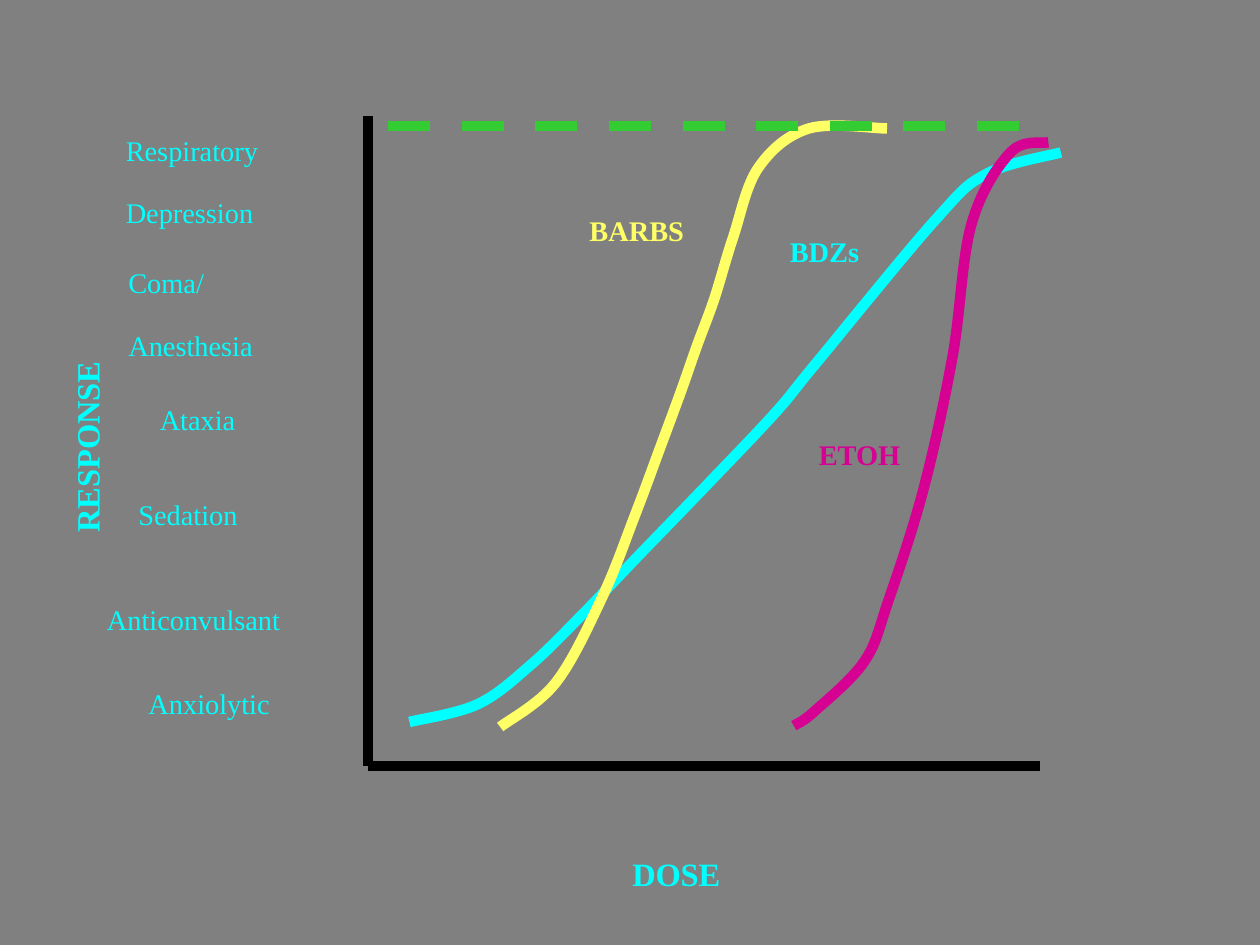
"""Build a slide of dose-response curves for three sedative drug classes."""
from lxml.etree import SubElement
from pptx import Presentation
from pptx.dml.color import RGBColor
from pptx.enum.dml import MSO_LINE
from pptx.enum.shapes import MSO_CONNECTOR
from pptx.enum.text import MSO_AUTO_SIZE
from pptx.oxml.ns import qn
from pptx.util import Inches, Pt

GRAY = RGBColor(0x80, 0x80, 0x80)
BLACK = RGBColor(0, 0, 0)
CYAN = RGBColor(0, 0xFF, 0xFF)
YELLOW = RGBColor(0xFF, 0xFF, 0x66)
GREEN = RGBColor(0x33, 0xCC, 0x33)
PINK = RGBColor(0xD6, 0x00, 0x93)

FONT = "Times New Roman"
STROKE = Pt(6)
LABEL, TITLE = 28, 32
HEIGHT = {LABEL: 0.42, TITLE: 0.45}
LEADING = 0.31

LEFT, RIGHT = 2.92, 8.25
TOP, BASE = 0.92, 6.08
AXES = [((LEFT, TOP), (LEFT, BASE)), ((LEFT, BASE), (RIGHT, BASE))]
CEILING = ((3.08, 1), (RIGHT, 1))

BDZS = [
    (3.25, 5.73), (3.79, 5.59), (4.21, 5.28), (4.62, 4.88), (5.04, 4.44),
    (5.6, 3.86), (6.15, 3.28), (6.48, 2.88), (7.42, 1.75), (7.83, 1.38),
    (8.42, 1.21),
]
BARBS = [
    (3.97, 5.77), (4.41, 5.42), (4.78, 4.74), (5.04, 4.09), (5.23, 3.58),
    (5.4, 3.12), (5.53, 2.75), (5.67, 2.37), (5.82, 1.88), (6.02, 1.33),
    (6.42, 1.02), (7.04, 1.02),
]
ETOH = [
    (6.3, 5.76), (6.46, 5.65), (6.86, 5.25), (7.05, 4.77), (7.33, 3.88),
    (7.56, 2.83), (7.71, 1.78), (8.02, 1.21), (8.32, 1.13),
]

EFFECTS = [
    (["Respiratory", "Depression"], 0.9, 0.78, 1.56),
    (["Coma/", "Anesthesia"], 0.92, 1.83, 1.51),
    (["Ataxia"], 1.17, 2.92, 0.94),
    (["Sedation"], 1, 3.67, 1.25),
    (["Anxiolytic"], 1.08, 5.17, 1.32),
    (["Anticonvulsant"], 0.75, 4.5, 1.92),
]
TITLES = [
    (["DOSE"], 4.92, 6.47, 1.03, 0),
    (["RESPONSE"], -0.46, 3.19, 1.82, 270),
]
DRUGS = [
    (["BARBS"], 4.58, 1.42, 1.14, YELLOW),
    (["BDZs"], 6.17, 1.58, 0.89, CYAN),
    (["ETOH"], 6.4, 3.19, 0.93, PINK),
]


def stroke(line, color):
    line.color.rgb = color
    line.width = STROKE


def add_line(shapes, ends, color):
    (x1, y1), (x2, y2) = ends
    line = shapes.add_connector(
        MSO_CONNECTOR.STRAIGHT, Inches(x1), Inches(y1), Inches(x2), Inches(y2))
    stroke(line.line, color)
    SubElement(line._element.spPr, qn("a:effectLst"))
    return line


def shift(point, start, end):
    """Move a point by a sixth of the step from start to end."""
    return tuple(p + (b - a) / 6 for p, a, b in zip(point, start, end))


def smooth(knots):
    """Give two handles and an end for each Catmull-Rom span."""
    padded = [knots[0], *knots, knots[-1]]
    spans = zip(padded, padded[1:], padded[2:], padded[3:])
    return [(shift(start, prev, end), shift(end, after, start), end)
            for prev, start, end, after in spans]


def to_emu(point):
    return tuple(Inches(value) for value in point)


def add_curve(shapes, knots, color):
    spans = smooth(knots)
    pen = shapes.build_freeform(*to_emu(knots[0]))
    pen.add_line_segments(
        [to_emu(point) for span in spans for point in span], close=False)
    curve = pen.convert_to_shape()
    curve.shadow.inherit = False
    curve.fill.background()
    stroke(curve.line, color)
    track = next(curve._element.iter(qn("a:path")))
    steps = iter(track.findall(qn("a:lnTo")))
    for trio in zip(steps, steps, steps):
        bend = SubElement(track, qn("a:cubicBezTo"))
        for step in trio:
            bend.append(step[0])
            track.remove(step)


def add_label(shapes, lines, left, top, width, color=CYAN,
              size=LABEL, bold=False, turn=0):
    height = HEIGHT[size] + LEADING * (len(lines) - 1)
    box = shapes.add_textbox(*map(Inches, (left, top, width, height)))
    box.rotation = turn
    frame = box.text_frame
    frame.word_wrap = False
    frame.auto_size = MSO_AUTO_SIZE.SHAPE_TO_FIT_TEXT
    for i, text in enumerate(lines):
        para = frame.add_paragraph() if i else frame.paragraphs[0]
        run = para.add_run()
        run.text = text
        font = run.font
        font.name, font.size, font.bold = FONT, Pt(size), bold
        font.color.rgb = color
        run._r.get_or_add_rPr().set("baseline", "-16000")


def main():
    deck = Presentation()
    deck.slide_width, deck.slide_height = Inches(10), Inches(7.5)
    slide = deck.slides.add_slide(deck.slide_layouts[6])
    slide.background.fill.solid()
    slide.background.fill.fore_color.rgb = GRAY
    shapes = slide.shapes
    for ends in AXES:
        add_line(shapes, ends, BLACK)
    add_curve(shapes, BDZS, CYAN)
    add_curve(shapes, BARBS, YELLOW)
    for effect in EFFECTS:
        add_label(shapes, *effect)
    add_line(shapes, CEILING, GREEN).line.dash_style = MSO_LINE.DASH
    for *title, turn in TITLES:
        add_label(shapes, *title, size=TITLE, bold=True, turn=turn)
    add_curve(shapes, ETOH, PINK)
    for drug in DRUGS:
        add_label(shapes, *drug, bold=True)
    deck.save("out.pptx")


if __name__ == "__main__":
    main()
